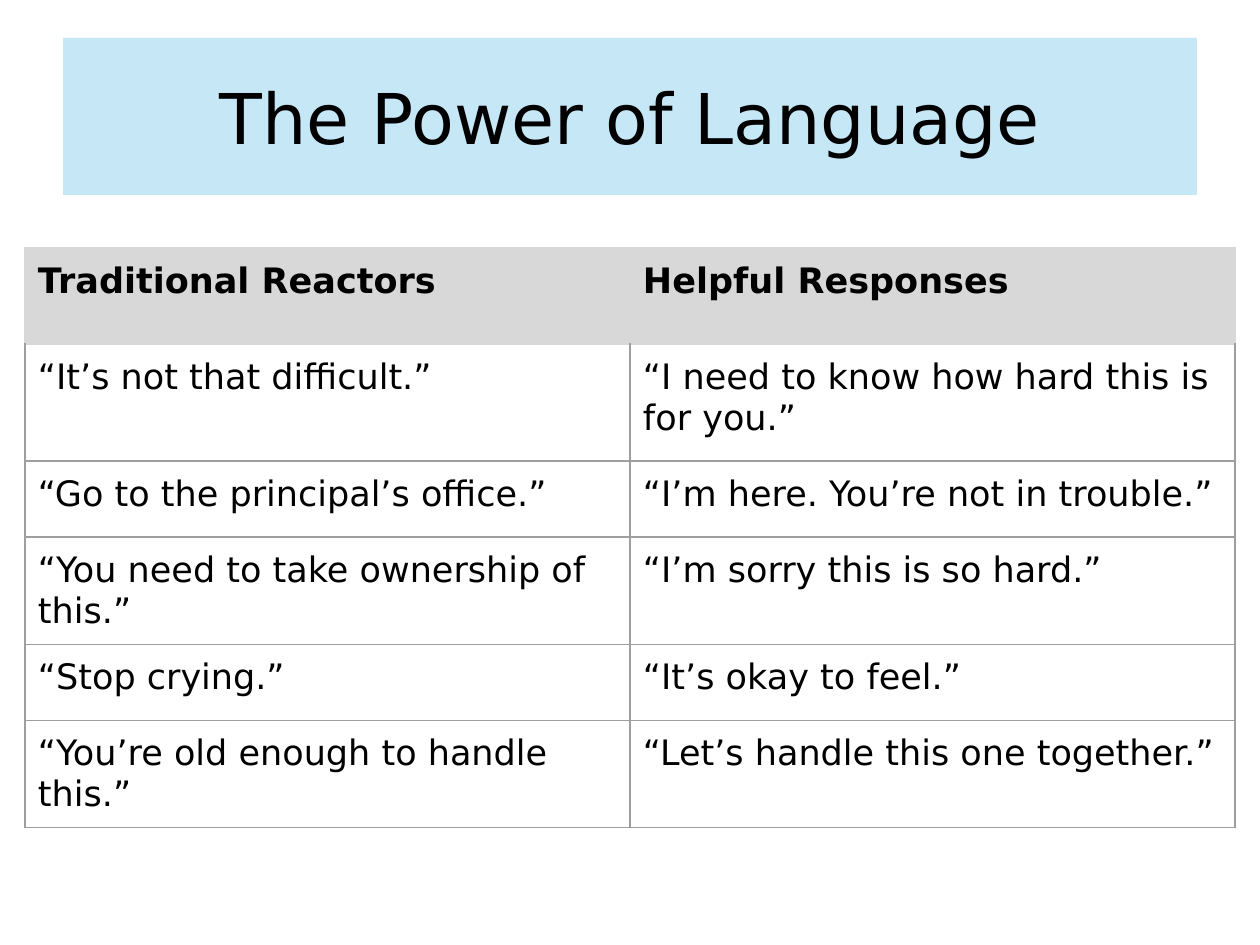
from dataclasses import dataclass

from lxml import etree
from pptx import Presentation
from pptx.dml.color import RGBColor
from pptx.enum.text import MSO_ANCHOR, PP_ALIGN
from pptx.oxml.ns import qn
from pptx.util import Pt

MIDDLE, TOP = MSO_ANCHOR.MIDDLE, MSO_ANCHOR.TOP
CENTER, LEFT = PP_ALIGN.CENTER, PP_ALIGN.LEFT
EMU_PER_PX = 914400 / 126
TITLE_ONLY = 5

ROWS = [
    ("Traditional Reactors", "Helpful Responses"),
    ("“It’s not that difficult.”", "“I need to know how hard this is for you.”"),
    ("“Go to the principal’s office.”", "“I’m here. You’re not in trouble.”"),
    ("“You need to take ownership of this.”", "“I’m sorry this is so hard.”"),
    ("“Stop crying.”", "“It’s okay to feel.”"),
    ("“You’re old enough to handle this.”", "“Let’s handle this one together.”"),
]
ROW_HEIGHTS = [96, 117, 76, 76, 76, 76]


@dataclass(frozen=True)
class Theme:
    font: str = "DejaVu Sans"
    text: str = "000000"
    banner: str = "A9DCF2"
    banner_opacity: int = 67
    header: str = "D8D8D8"
    grid: str = "9E9E9E"
    title_size: int = 40
    table_size: int = 20
    grid_width: float = 0.75


def px(length):
    return round(length * EMU_PER_PX)


class SlideBuilder:
    """Draws styled elements on the current slide, with lengths in px."""

    def __init__(self, slide, theme):
        self.slide = slide
        self.theme = theme

    def style(self, para, size, align, bold=False):
        para.alignment = align
        para.font.name = self.theme.font
        para.font.size = Pt(size)
        para.font.bold = bold
        para.font.color.rgb = RGBColor.from_string(self.theme.text)

    def title(self, text, left, top, width, height):
        box = self.slide.shapes.title
        box.left, box.top, box.width, box.height = map(px, (left, top, width, height))
        box.fill.solid()
        box.fill.fore_color.rgb = RGBColor.from_string(self.theme.banner)
        color = box._element.spPr.find(qn("a:solidFill"))[0]
        etree.SubElement(color, qn("a:alpha"), val=str(self.theme.banner_opacity * 1000))
        box.text_frame.text = text
        box.text_frame.vertical_anchor = MIDDLE
        self.style(box.text_frame.paragraphs[0], self.theme.title_size, CENTER)

    def border(self, cell, side, color):
        line = etree.SubElement(cell._tc.get_or_add_tcPr(), qn(f"a:ln{side}"),
                                w=str(Pt(self.theme.grid_width)))
        fill = etree.SubElement(line, qn("a:solidFill"))
        etree.SubElement(fill, qn("a:srgbClr"), val=color)

    def cell(self, cell, text, row):
        is_header = row == 0
        for side in "LRTB":
            shaded = is_header or (row == 1 and side == "T")
            self.border(cell, side, self.theme.header if shaded else self.theme.grid)
        if is_header:
            cell.fill.solid()
            cell.fill.fore_color.rgb = RGBColor.from_string(self.theme.header)
        else:
            cell.fill.background()
        cell.margin_left = cell.margin_right = px(13)
        cell.margin_top = cell.margin_bottom = px(13)
        cell.vertical_anchor = TOP
        cell.text = text
        self.style(cell.text_frame.paragraphs[0], self.theme.table_size, LEFT, is_header)

    def table(self, rows, heights, left, top, column_width):
        columns = len(rows[0])
        frame = self.slide.shapes.add_table(
            len(rows), columns, px(left), px(top),
            px(column_width * columns), px(sum(heights)))
        table = frame.table
        table.horz_banding = False
        table.first_row = False
        for column in table.columns:
            column.width = px(column_width)
        for row, (texts, height) in enumerate(zip(rows, heights)):
            table.rows[row].height = px(height)
            for column, text in enumerate(texts):
                self.cell(table.cell(row, column), text, row)


def main():
    deck = Presentation()
    deck.slide_width, deck.slide_height = px(1260), px(945)
    page = SlideBuilder(deck.slides.add_slide(deck.slide_layouts[TITLE_ONLY]), Theme())
    page.title("The Power of Language", 63, 38, 1134, 157)
    page.table(ROWS, ROW_HEIGHTS, 25, 248, 605)
    deck.save("out.pptx")


if __name__ == "__main__":
    main()
